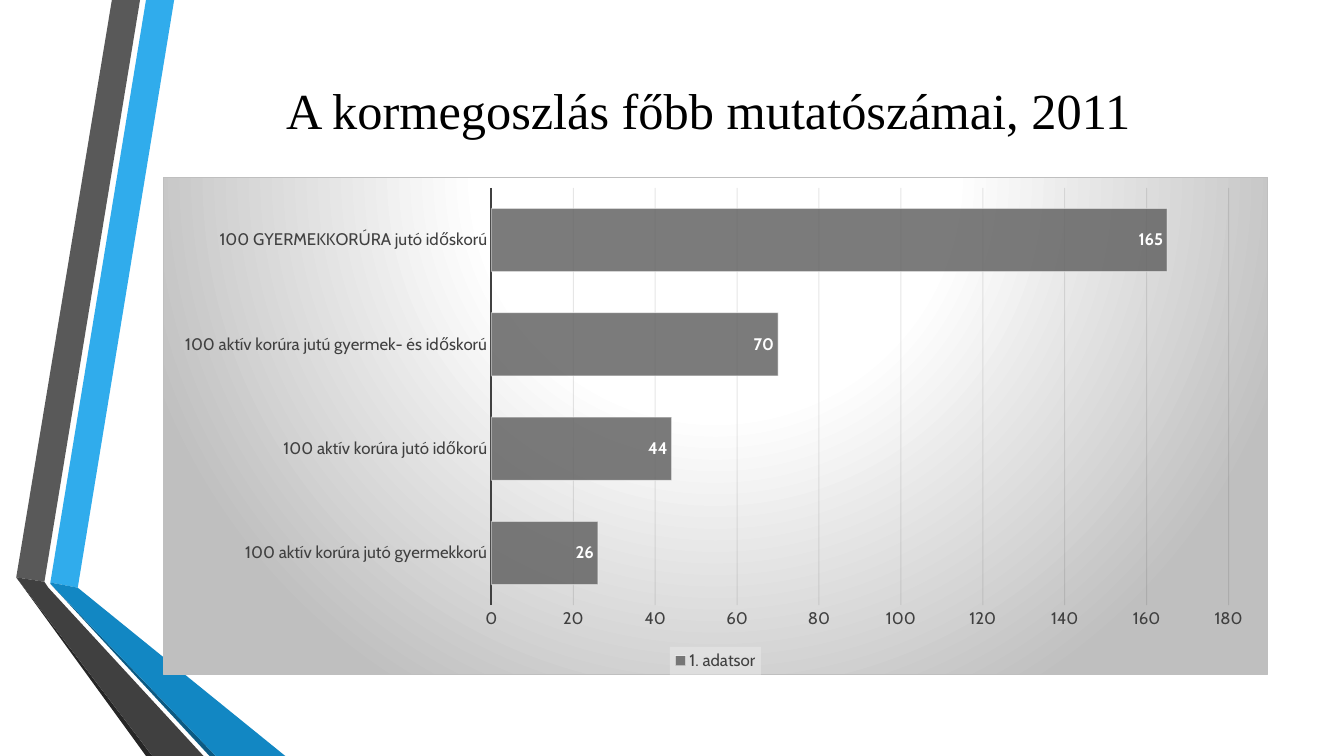
from lxml import etree
from pptx import Presentation
from pptx.chart.data import CategoryChartData
from pptx.dml.color import RGBColor
from pptx.enum.chart import (XL_CHART_TYPE, XL_LABEL_POSITION as LabelPos,
                             XL_LEGEND_POSITION as LegendPos, XL_TICK_MARK as TickMark)
from pptx.enum.text import MSO_ANCHOR, PP_ALIGN
from pptx.oxml import parse_xml
from pptx.oxml.ns import nsdecls, qn
from pptx.util import Cm, Pt

COLORS = {
    "sky": "30ACEC", "blue": "1287C3", "navy": "0C5A82",
    "grey": "595959", "charcoal": "404040", "dark": "262626",
    "bar": "646464", "silver": "BFBFBF", "grid": "0D0D0D",
    "legend": "F2F2F2", "white": "FFFFFF", "black": "000000",
}
BOTTOM = 19.05
LEFT, WIDTH = 4.11, 27.84

# Ribbon pieces from back to front, corners in cm
RIBBONS = [
    ("sky", [(1.27, 14.68), (1.96, 14.81), (4.39, 0), (3.68, 0)]),
    ("grey", [(3.53, 0), (2.82, 0), (0.41, 14.55), (1.12, 14.66)]),
    ("dark", [(0.41, 14.55), (3.68, BOTTOM), (3.84, BOTTOM)]),
    ("navy", [(1.27, 14.71), (5.28, BOTTOM), (5.44, BOTTOM)]),
    ("blue", [(1.27, 14.71), (5.44, BOTTOM), (7.19, BOTTOM), (1.96, 14.81), (1.27, 14.68)]),
    ("charcoal", [(5.13, BOTTOM), (1.22, 14.81), (1.12, 14.66), (0.41, 14.55), (3.84, BOTTOM)]),
]
AGE_RATIOS = {
    "100 aktív korúra jutó gyermekkorú": 26,
    "100 aktív korúra jutó időkorú": 44,
    "100 aktív korúra jutú gyermek- és időskorú": 70,
    "100 GYERMEKKORÚRA jutó időskorú": 165,
}


def rgb(name):
    return RGBColor.from_string(COLORS[name])


def set_alpha(shape_format, percent):
    """Make the last colour set inside a fill or line element translucent."""
    color = list(shape_format.iter(qn("a:srgbClr")))[-1]
    etree.SubElement(color, qn("a:alpha")).set("val", str(percent * 1000))


class SlideBuilder:
    def __init__(self, slide):
        self.slide = slide
        self.title_font = "Times New Roman"
        self.chart_font = "Cabin"

    def style(self, font, size, color, bold=False):
        font.name, font.size, font.bold = self.chart_font, Pt(size), bold
        font.color.rgb = rgb(color)

    def ribbon(self, color, corners):
        start, *others = [(Cm(x), Cm(y)) for x, y in corners]
        outline = self.slide.shapes.build_freeform(*start)
        outline.add_line_segments(others, close=True)
        piece = outline.convert_to_shape()
        piece.shadow.inherit = False
        piece.fill.solid()
        piece.fill.fore_color.rgb = rgb(color)
        piece.line.fill.background()

    def title(self, text, top, height):
        box = self.slide.shapes.add_textbox(Cm(LEFT), Cm(top), Cm(WIDTH), Cm(height))
        frame = box.text_frame
        frame.word_wrap = True
        frame.vertical_anchor = MSO_ANCHOR.MIDDLE
        frame.margin_right = Cm(0.6)
        paragraph = frame.paragraphs[0]
        paragraph.alignment = PP_ALIGN.CENTER
        run = paragraph.add_run()
        run.text = text
        run.font.name, run.font.size = self.title_font, Pt(36)
        run.font.color.rgb = rgb("black")

    def bar_chart(self, series_name, ratios, top, height):
        data = CategoryChartData()
        data.categories = list(ratios)
        data.add_series(series_name, list(ratios.values()))
        chart = self.slide.shapes.add_chart(
            XL_CHART_TYPE.BAR_CLUSTERED, Cm(LEFT), Cm(top), Cm(WIDTH), Cm(height), data).chart
        chart.has_title = False
        self.style(chart.font, 10, "black")
        self.bars(chart.plots[0])
        self.axes(chart)
        self.legend(chart)
        self.plot_layout(chart)
        self.backdrop(chart)

    def bars(self, plot):
        plot.gap_width = 65
        plot.vary_by_categories = False
        series = plot.series[0]
        series.invert_if_negative = False
        series.format.fill.solid()
        series.format.fill.fore_color.rgb = rgb("bar")
        properties = series.format.fill._xPr
        set_alpha(properties, 85)
        series.format.line.color.rgb = rgb("white")
        series.format.line.width = Pt(0.75)
        set_alpha(properties, 50)
        labels = series.data_labels
        labels.show_value = True
        labels.position = LabelPos.INSIDE_END
        self.style(labels.font, 12, "white", bold=True)

    def axes(self, chart):
        for axis in (chart.category_axis, chart.value_axis):
            axis.major_tick_mark = axis.minor_tick_mark = TickMark.NONE
            self.style(axis.tick_labels.font, 12, "charcoal")
        category_line = chart.category_axis.format.line
        category_line.color.rgb = rgb("charcoal")
        category_line.width = Pt(1.5)
        values = chart.value_axis
        values.minimum_scale, values.maximum_scale, values.major_unit = 0, 180, 20
        values.format.line.fill.background()
        values.has_major_gridlines = True
        grid_line = values.major_gridlines.format.line
        grid_line.color.rgb = rgb("grid")
        grid_line.width = Pt(0.75)
        set_alpha(chart.element.find(".//" + qn("c:majorGridlines")), 10)

    def legend(self, chart):
        chart.has_legend = True
        chart.legend.position = LegendPos.BOTTOM
        chart.legend.include_in_layout = False
        self.style(chart.legend.font, 12, "charcoal")
        panel = parse_xml(
            f'<c:spPr {nsdecls("c", "a")}><a:solidFill><a:srgbClr val="{COLORS["legend"]}">'
            '<a:alpha val="39000"/></a:srgbClr></a:solidFill></c:spPr>')
        chart.element.find(".//" + qn("c:legend")).find(qn("c:txPr")).addprevious(panel)

    def plot_layout(self, chart):
        """Fix the inner plot area as fractions of the chart."""
        area = chart.element.find(".//" + qn("c:plotArea"))
        for automatic in area.findall(qn("c:layout")):
            area.remove(automatic)
        places = {"x": 0.297, "y": 0.02, "w": 0.668, "h": 0.84}
        modes = '<c:xMode val="edge"/><c:yMode val="edge"/>'
        sizes = "".join(f'<c:{key} val="{part}"/>' for key, part in places.items())
        area.insert(0, parse_xml(
            f'<c:layout {nsdecls("c")}><c:manualLayout><c:layoutTarget val="inner"/>'
            f'{modes}{sizes}</c:manualLayout></c:layout>'))

    def backdrop(self, chart):
        """Give the chart its radial gradient and thin border."""
        stops = "".join(
            f'<a:gs pos="{place * 1000}"><a:srgbClr val="{COLORS[color]}"/></a:gs>'
            for place, color in ((0, "white"), (39, "white"), (100, "silver")))
        chart.element.find(qn("c:chart")).addnext(parse_xml(
            f'<c:spPr {nsdecls("c", "a")}><a:gradFill><a:gsLst>{stops}</a:gsLst>'
            '<a:path path="circle"><a:fillToRect l="50000" t="-80000" r="50000" b="180000"/>'
            f'</a:path></a:gradFill><a:ln w="{Pt(0.75)}"><a:solidFill>'
            f'<a:srgbClr val="{COLORS["silver"]}"/></a:solidFill></a:ln></c:spPr>'))


def main():
    deck = Presentation()
    deck.slide_width, deck.slide_height = Cm(33.87), Cm(BOTTOM)
    builder = SlideBuilder(deck.slides.add_slide(deck.slide_layouts[6]))
    for color, corners in RIBBONS:
        builder.ribbon(color, corners)
    builder.title("A kormegoszlás főbb mutatószámai, 2011", top=1.9, height=1.73)
    builder.bar_chart("1. adatsor", AGE_RATIOS, top=4.47, height=12.55)
    deck.save("out.pptx")


if __name__ == "__main__":
    main()
